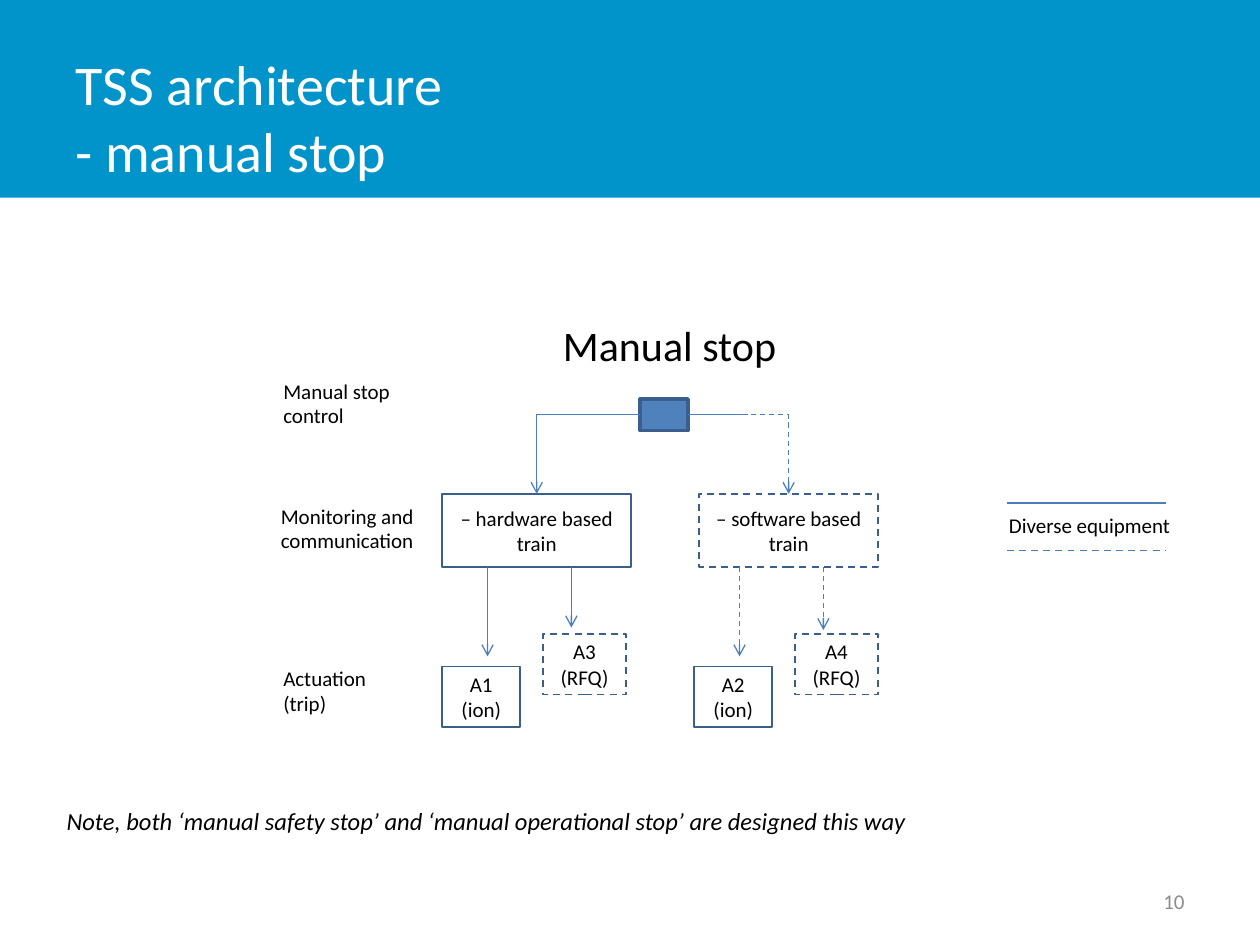
from lxml.etree import SubElement
from pptx import Presentation
from pptx.dml.color import RGBColor
from pptx.enum.dml import MSO_LINE
from pptx.enum.shapes import MSO_CONNECTOR, MSO_SHAPE
from pptx.enum.text import MSO_ANCHOR, PP_ALIGN
from pptx.oxml.ns import qn
from pptx.util import Pt

HEADER_BLUE = RGBColor(0x00, 0x94, 0xCA)
BUTTON_BLUE = RGBColor(0x4F, 0x81, 0xBD)
OUTLINE_BLUE = RGBColor(0x3A, 0x5F, 0x8C)
ARROW_BLUE = RGBColor(0x4B, 0x7E, 0xBC)
BLACK = RGBColor(0x00, 0x00, 0x00)
WHITE = RGBColor(0xFF, 0xFF, 0xFF)
GREY = RGBColor(0x8C, 0x8C, 0x8C)
FONT = "Calibri"

TITLE = "TSS architecture\n- manual stop"
PAGE_NUMBER = "10"
HEADING = "Manual stop"
NOTE = "Note, both ‘manual safety stop’ and ‘manual operational stop’ are designed this way"
LEGEND = "Diverse equipment"
# text, left, top, width, height
ROW_LABELS = [
    ("Manual stop control", 154.8, 213.1, 85, 43.9),
    ("Monitoring and communication", 153.4, 284.4, 126.7, 41.8),
    ("Actuation\n(trip)", 154.8, 377.3, 85, 43.2),
]
# text, left, width, dashed, button side, ion actuator, RFQ actuator, RFQ arrow end
TRAINS = [
    ("– hardware based train", 252.7, 108, False, 1, "A1\n(ion)", "A3\n(RFQ)", 358.6),
    ("– software based train", 399.6, 102.2, True, 3, "A2\n(ion)", "A4\n(RFQ)", 360),
]
TRAIN_TOP, TRAIN_HEIGHT = 282.2, 41.8
TRAIN_BOTTOM = TRAIN_TOP + TRAIN_HEIGHT
FIRST_COLUMN, COLUMN_PITCH = 252.7, 144
ACTUATOR_HEIGHT = 34.6
LEGEND_LINES = [(287.3, False), (314.6, True)]

presentation = Presentation()
presentation.slide_width, presentation.slide_height = Pt(720), Pt(540)
slide = presentation.slides.add_slide(presentation.slide_layouts[6])


def write(shape, text, size, color=BLACK, align=PP_ALIGN.LEFT,
          anchor=MSO_ANCHOR.TOP, wrap=True):
    frame = shape.text_frame
    frame.word_wrap = wrap
    frame.vertical_anchor = anchor
    paragraph = frame.paragraphs[0]
    paragraph.text = text
    paragraph.alignment = align
    font = paragraph.font
    font.name, font.size, font.color.rgb = FONT, Pt(size), color
    return paragraph


def add_text(text, left, top, width, height, size, **style):
    box = slide.shapes.add_textbox(Pt(left), Pt(top), Pt(width), Pt(height))
    return write(box, text, size, **style)


def add_box(left, top, width, height, fill=None, line_width=1, dashed=False, text=""):
    """Add a rectangle; a line width of 0 means no outline."""
    box = slide.shapes.add_shape(MSO_SHAPE.RECTANGLE, Pt(left), Pt(top), Pt(width), Pt(height))
    box.shadow.inherit = False
    if fill is None:
        box.fill.background()
    else:
        box.fill.solid()
        box.fill.fore_color.rgb = fill
    if line_width:
        box.line.color.rgb = OUTLINE_BLUE
        box.line.width = Pt(line_width)
        if dashed:
            box.line.dash_style = MSO_LINE.DASH
    else:
        box.line.fill.background()
    if text:
        write(box, text, 12, align=PP_ALIGN.CENTER, anchor=MSO_ANCHOR.MIDDLE)
    return box


def add_line(x1, y1, x2, y2, width=0.75, dashed=False, arrow=False,
             kind=MSO_CONNECTOR.STRAIGHT):
    line = slide.shapes.add_connector(kind, Pt(x1), Pt(y1), Pt(x2), Pt(y2))
    line.line.color.rgb = ARROW_BLUE
    line.line.width = Pt(width)
    if dashed:
        line.line.dash_style = MSO_LINE.DASH
    properties = line._element.spPr
    if arrow:
        SubElement(properties.find(qn("a:ln")), qn("a:tailEnd"), type="arrow")
    SubElement(properties, qn("a:effectLst"))
    return line


add_box(0, 0, 720, 113, fill=HEADER_BLUE, line_width=0)
add_text(TITLE, 36, 21.6, 562.3, 90, 32, color=WHITE, anchor=MSO_ANCHOR.MIDDLE)
add_text(PAGE_NUMBER, 516.2, 500.4, 167.8, 28.8, 12, color=GREY,
         align=PP_ALIGN.RIGHT, anchor=MSO_ANCHOR.MIDDLE)

button = add_box(365.8, 228, 27.4, 18, fill=BUTTON_BLUE, line_width=2)
button_edges = {1: 365.8, 3: 393.2}

for column, (text, left, width, dashed, side, ion, rfq, rfq_end) in enumerate(TRAINS):
    train = add_box(left, TRAIN_TOP, width, TRAIN_HEIGHT, dashed=dashed, text=text)
    elbow = add_line(button_edges[side], 237, left + width / 2, TRAIN_TOP,
                     dashed=dashed, arrow=True, kind=MSO_CONNECTOR.ELBOW)
    elbow._element.spPr.find(qn("a:prstGeom")).set("prst", "bentConnector2")
    elbow.begin_connect(button, side)
    elbow.end_connect(train, 0)

    x = FIRST_COLUMN + column * COLUMN_PITCH
    add_box(x, 380.9, 44.6, ACTUATOR_HEIGHT, text=ion)
    add_box(x + 57.6, 362.2, 47.5, ACTUATOR_HEIGHT, dashed=True, text=rfq)
    for offset, end in [(25.9, 375.1), (73.8, rfq_end)]:
        add_line(x + offset, TRAIN_BOTTOM, x + offset, end, dashed=dashed, arrow=True)

solid_stub = add_line(393.2, 237, 427.7, 237)
solid_stub.begin_connect(button, 3)

for label in ROW_LABELS:
    add_text(*label, 12).line_spacing = Pt(14)
add_text(HEADING, 314.6, 179.3, 150.5, 39.6, 24, wrap=False)
add_text(NOTE, 31, 457.2, 496, 24.5, 14, wrap=False).font.italic = True

for y, dashed in LEGEND_LINES:
    add_line(575.3, y, 666, y, width=1, dashed=dashed)
add_text(LEGEND, 569.5, 289.4, 136, 21.6, 12)

presentation.save("out.pptx")
